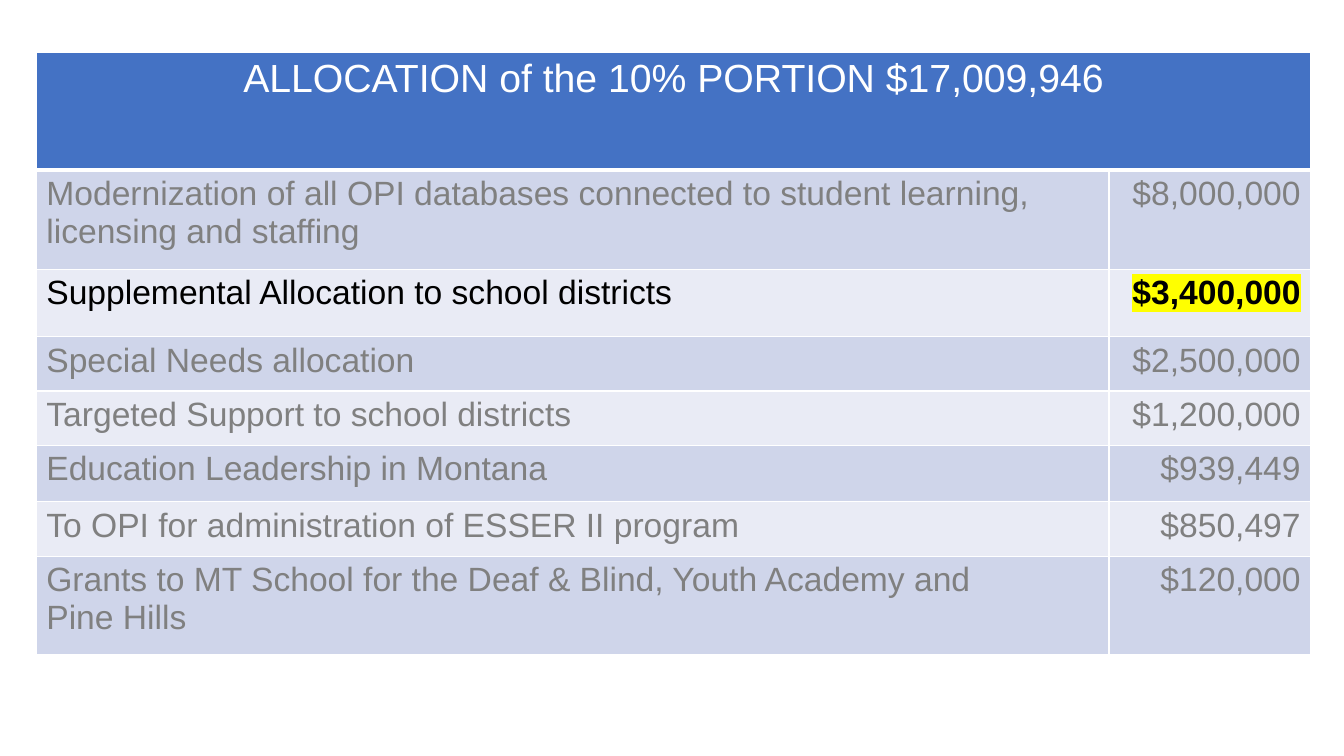
from lxml import etree
from pptx import Presentation
from pptx.dml.color import RGBColor
from pptx.enum.text import PP_ALIGN
from pptx.oxml.ns import qn
from pptx.util import Inches, Pt

LEFT, CENTER, RIGHT = PP_ALIGN.LEFT, PP_ALIGN.CENTER, PP_ALIGN.RIGHT
BLANK_LAYOUT = 6
COLORS = {
    "white": "FFFFFF", "header": "4472C4", "band_dark": "CFD5EA",
    "band_light": "E9EBF5", "muted": "808080", "black": "000000",
    "highlight": "FFFF00",
}
TITLE = "ALLOCATION of the 10% PORTION $17,009,946"
HEADER_HEIGHT = 1.17
COLUMN_WIDTHS = (10.64, 2)
ALLOCATIONS = [  # purpose, amount, row height
    ("Modernization of all OPI databases connected to student learning, "
     "licensing and staffing", "$8,000,000", 0.98),
    ("Supplemental Allocation to school districts", "$3,400,000", 0.67),
    ("Special Needs allocation", "$2,500,000", 0.54),
    ("Targeted Support to school districts", "$1,200,000", 0.54),
    ("Education Leadership in Montana", "$939,449", 0.56),
    ("To OPI for administration of ESSER II program", "$850,497", 0.54),
    ("Grants to MT School for the Deaf & Blind, Youth Academy and\nPine Hills",
     "$120,000", 0.98),
]
EMPHASIZED_AMOUNT = "$3,400,000"


class SlideBuilder:
    font = "Arial"

    def __init__(self, presentation):
        self.slide = presentation.slides.add_slide(
            presentation.slide_layouts[BLANK_LAYOUT])

    def add_table(self, left, top, widths, heights):
        frame = self.slide.shapes.add_table(
            len(heights), len(widths), Inches(left), Inches(top),
            Inches(sum(widths)), Inches(sum(heights)))
        table = frame.table
        for column, width in zip(table.columns, widths):
            column.width = Inches(width)
        for row, height in zip(table.rows, heights):
            row.height = Inches(height)
        return table

    def style_cell(self, cell, fill, bottom_width=1):
        cell.fill.solid()
        cell.fill.fore_color.rgb = RGBColor.from_string(COLORS[fill])
        properties = cell._tc.get_or_add_tcPr()
        widths = {"lnL": 1, "lnR": 1, "lnT": 1, "lnB": bottom_width}
        for index, (side, width) in enumerate(widths.items()):
            line = etree.Element(qn(f"a:{side}"), w=str(Pt(width)))
            solid = etree.SubElement(line, qn("a:solidFill"))
            etree.SubElement(solid, qn("a:srgbClr"), val=COLORS["white"])
            properties.insert(index, line)

    def write_cell(self, cell, text, size, color, align=LEFT, bold=False,
                   highlight=None):
        """Write each line of the text as its own paragraph."""
        for index, line in enumerate(text.split("\n")):
            frame = cell.text_frame
            paragraph = frame.add_paragraph() if index else frame.paragraphs[0]
            paragraph.alignment = align
            run = paragraph.add_run()
            run.text = line
            run.font.name = self.font
            run.font.size = Pt(size)
            run.font.bold = bold
            run.font.color.rgb = RGBColor.from_string(COLORS[color])
            if highlight:
                marker = etree.Element(qn("a:highlight"))
                etree.SubElement(marker, qn("a:srgbClr"), val=COLORS[highlight])
                run.font._element.find(qn("a:solidFill")).addnext(marker)


def main():
    presentation = Presentation()
    presentation.slide_width = Inches(13.33)
    presentation.slide_height = Inches(7.5)
    builder = SlideBuilder(presentation)

    heights = [HEADER_HEIGHT] + [height for _, _, height in ALLOCATIONS]
    table = builder.add_table(0.36, 0.52, COLUMN_WIDTHS, heights)

    header = table.cell(0, 0)
    header.merge(table.cell(0, 1))
    for column in range(len(COLUMN_WIDTHS)):
        builder.style_cell(table.cell(0, column), "header", bottom_width=3)
    builder.write_cell(header, TITLE, 28, "white", CENTER)

    for row, (purpose, amount, _) in enumerate(ALLOCATIONS, start=1):
        emphasized = amount == EMPHASIZED_AMOUNT
        color = "black" if emphasized else "muted"
        purpose_cell, amount_cell = table.cell(row, 0), table.cell(row, 1)
        for cell in (purpose_cell, amount_cell):
            builder.style_cell(cell, "band_dark" if row % 2 else "band_light")
        builder.write_cell(purpose_cell, purpose, 24, color)
        builder.write_cell(amount_cell, amount, 24, color, RIGHT, emphasized,
                           "highlight" if emphasized else None)

    presentation.save("out.pptx")


if __name__ == "__main__":
    main()
